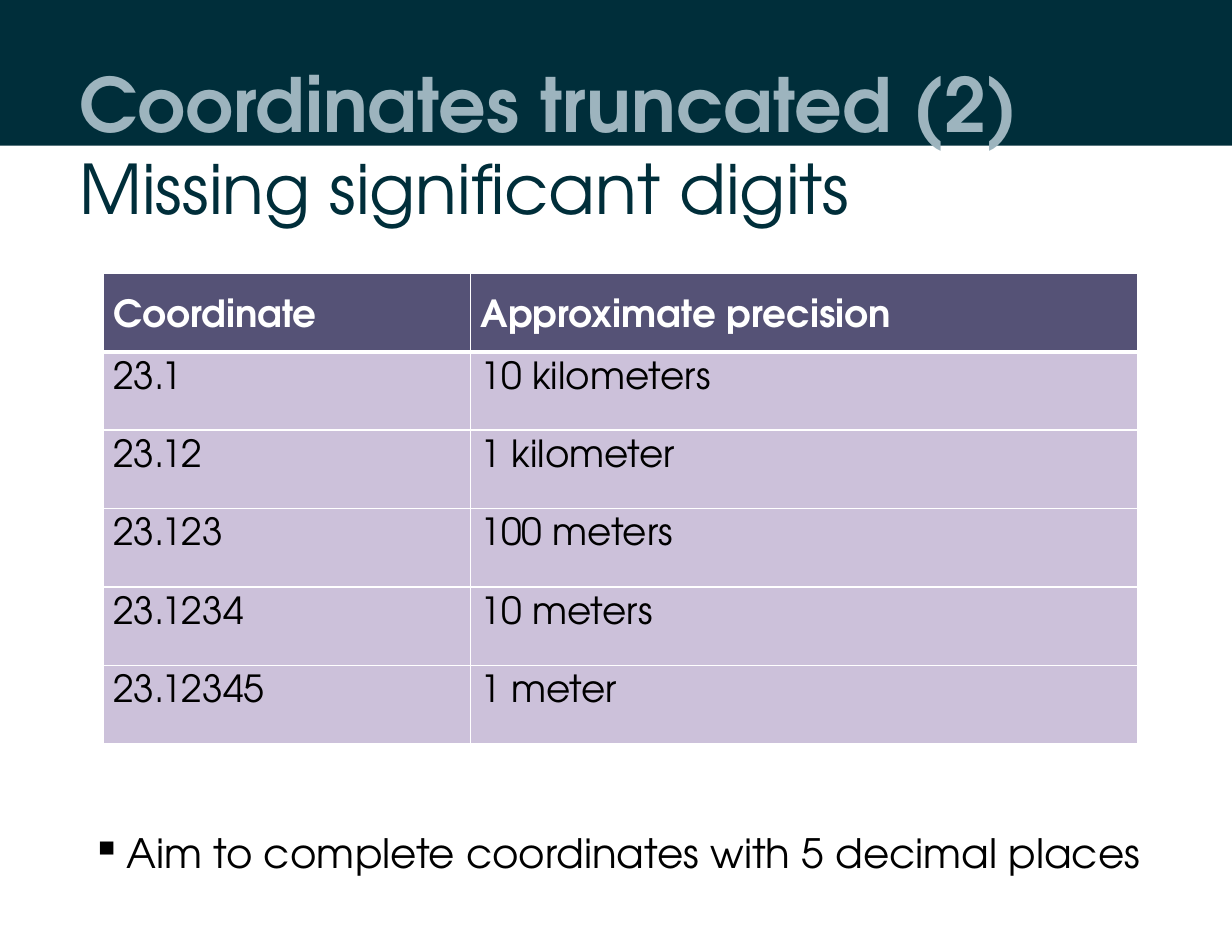
from dataclasses import dataclass

import pptx
import pptx.dml.color
import pptx.enum.shapes
import pptx.enum.text
import pptx.oxml
import pptx.oxml.ns
import pptx.util
from pptx.util import Inches


@dataclass(frozen=True)
class Theme:
    font: str = "TeX Gyre Adventor"
    navy: str = "002E3A"
    mist: str = "9DB4BE"
    purple: str = "555276"
    lilac: str = "CCC1DA"
    white: str = "FFFFFF"
    black: str = "000000"
    title_size: int = 48
    subtitle_size: int = 44
    advice_size: int = 26
    table_size: int = 24
    text_leading: float = 1.3
    table_leading: float = 1.19


@dataclass(frozen=True)
class Line:
    text: str
    left: float
    top: float
    width: float
    height: float
    size: int
    color: str
    bold: bool = False
    bullet: str = ""


THEME = Theme()

LINES = [
    Line("Coordinates truncated (2)", 0.61, 0.4, 9.54, 1.25,
         THEME.title_size, THEME.mist, bold=True),
    Line("Aim to complete coordinates with 5 decimal places", 0.65, 7.31, 9.92, 0.62,
         THEME.advice_size, THEME.black, bullet="▪"),
    Line("Missing significant digits", 0.61, 1.19, 7.25, 0.92,
         THEME.subtitle_size, THEME.navy),
]

PRECISION_ROWS = [
    ("Coordinate", "Approximate precision"),
    ("23.1", "10 kilometers"),
    ("23.12", "1 kilometer"),
    ("23.123", "100 meters"),
    ("23.1234", "10 meters"),
    ("23.12345", "1 meter"),
]
COLUMN_WIDTHS = (3.28, 5.96)
ROW_HEIGHT = 0.7


def rgb(color: str) -> pptx.dml.color.RGBColor:
    return pptx.dml.color.RGBColor.from_string(color)


def style_paragraph(paragraph, size: int, color: str, bold: bool, leading: float) -> None:
    # Exact leading keeps the baselines in place
    paragraph.line_spacing = pptx.util.Pt(round(size * leading, 1))
    for run in paragraph.runs:
        run.font.name = THEME.font
        run.font.size = pptx.util.Pt(size)
        run.font.bold = bold
        run.font.color.rgb = rgb(color)


def add_bullet(paragraph, character: str) -> None:
    properties = paragraph._p.get_or_add_pPr()
    properties.set("marL", str(Inches(0.38)))
    properties.set("indent", str(Inches(-0.31)))
    bullet = pptx.oxml.parse_xml(
        f'<a:buChar {pptx.oxml.ns.nsdecls("a")} char="{character}"/>')
    properties.append(bullet)


def add_band(slide) -> None:
    band = slide.shapes.add_shape(pptx.enum.shapes.MSO_SHAPE.RECTANGLE,
                                  0, 0, Inches(11), Inches(1.3))
    band.shadow.inherit = False
    band.fill.solid()
    band.fill.fore_color.rgb = rgb(THEME.navy)
    band.line.fill.background()


def add_line(slide, line: Line) -> None:
    box = slide.shapes.add_textbox(Inches(line.left), Inches(line.top),
                                   Inches(line.width), Inches(line.height))
    box.text_frame.word_wrap = True
    box.text_frame.text = line.text
    paragraph = box.text_frame.paragraphs[0]
    if line.bullet:
        add_bullet(paragraph, line.bullet)
    style_paragraph(paragraph, line.size, line.color, line.bold, THEME.text_leading)


def add_borders(cell, bottom_width: float) -> None:
    properties = cell._tc.get_or_add_tcPr()
    widths = {"lnL": 1, "lnR": 1, "lnT": 1, "lnB": bottom_width}
    # Borders come before the fill in the cell properties
    for position, (tag, width) in enumerate(widths.items()):
        properties.insert(position, pptx.oxml.parse_xml(
            f'<a:{tag} {pptx.oxml.ns.nsdecls("a")} w="{pptx.util.Pt(width)}">'
            f'<a:solidFill><a:srgbClr val="{THEME.white}"/></a:solidFill></a:{tag}>'))


def fill_cell(cell, text: str, is_header: bool) -> None:
    anchors = pptx.enum.text.MSO_ANCHOR
    cell.text_frame.text = text
    cell.margin_left = cell.margin_right = Inches(0.09)
    cell.margin_top = cell.margin_bottom = 0
    cell.vertical_anchor = anchors.MIDDLE if is_header else anchors.TOP
    cell.fill.solid()
    cell.fill.fore_color.rgb = rgb(THEME.purple if is_header else THEME.lilac)
    style_paragraph(cell.text_frame.paragraphs[0], THEME.table_size,
                    THEME.white if is_header else THEME.black,
                    is_header, THEME.table_leading)
    add_borders(cell, 3 if is_header else 1)


def add_precision_table(slide) -> None:
    table = slide.shapes.add_table(
        len(PRECISION_ROWS), len(COLUMN_WIDTHS), Inches(0.92), Inches(2.44),
        Inches(sum(COLUMN_WIDTHS)), Inches(ROW_HEIGHT * len(PRECISION_ROWS))).table
    table.horz_banding = False
    for column, width in zip(table.columns, COLUMN_WIDTHS):
        column.width = Inches(width)
    for row_index, texts in enumerate(PRECISION_ROWS):
        table.rows[row_index].height = Inches(ROW_HEIGHT)
        for column_index, text in enumerate(texts):
            fill_cell(table.cell(row_index, column_index), text, row_index == 0)


def main() -> None:
    presentation = pptx.Presentation()
    presentation.slide_width = Inches(11)
    presentation.slide_height = Inches(8.5)
    slide = presentation.slides.add_slide(presentation.slide_layouts[6])

    # Header band, then the text over it
    add_band(slide)
    for line in LINES:
        add_line(slide, line)

    # Precision by number of decimals
    add_precision_table(slide)
    presentation.save("out.pptx")


if __name__ == "__main__":
    main()
